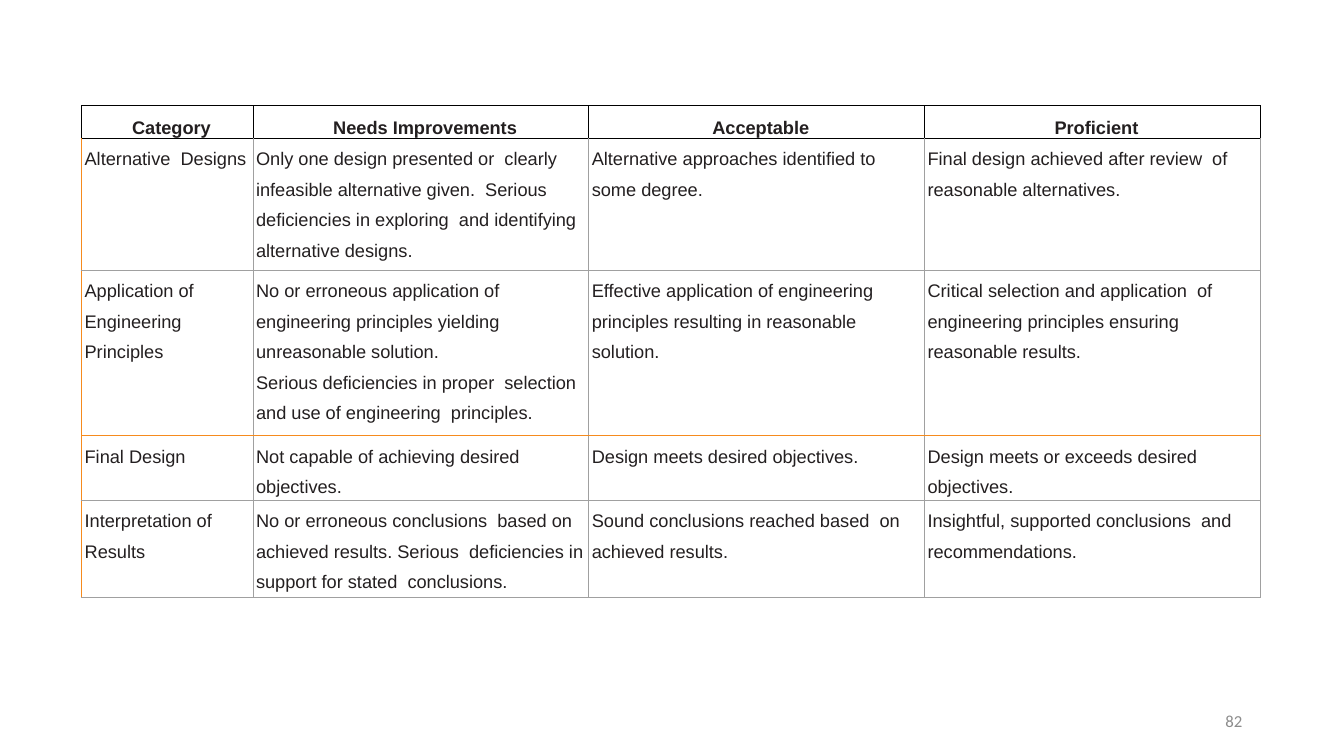
from lxml import etree
from pptx import Presentation
from pptx.dml.color import RGBColor
from pptx.enum.text import MSO_ANCHOR, PP_ALIGN
from pptx.oxml.ns import qn
from pptx.util import Inches, Pt

CENTER, RIGHT, LEFT = PP_ALIGN.CENTER, PP_ALIGN.RIGHT, PP_ALIGN.LEFT
TOP, MIDDLE = MSO_ANCHOR.TOP, MSO_ANCHOR.MIDDLE

RUBRIC = [
    ["Category", "Needs Improvements", "Acceptable", "Proficient"],
    ["Alternative  Designs",
     "Only one design presented or  clearly infeasible alternative given.  Serious deficiencies in exploring  and identifying alternative designs.",
     "Alternative approaches identified to some degree.",
     "Final design achieved after review  of reasonable alternatives."],
    ["Application of  Engineering  Principles",
     "No or erroneous application of  engineering principles yielding  unreasonable solution.\n"
     "Serious deficiencies in proper  selection and use of engineering  principles.",
     "Effective application of engineering  principles resulting in reasonable  solution.",
     "Critical selection and application  of engineering principles ensuring  reasonable results."],
    ["Final Design",
     "Not capable of achieving desired  objectives.",
     "Design meets desired objectives.",
     "Design meets or exceeds desired  objectives."],
    ["Interpretation of  Results",
     "No or erroneous conclusions  based on achieved results. Serious  deficiencies in support for stated  conclusions.",
     "Sound conclusions reached based  on achieved results.",
     "Insightful, supported conclusions  and recommendations."],
]
PAGE_NUMBER = "82"
COL_WIDTHS = [1.7, 3.33, 3.33, 3.33]
ROW_HEIGHTS = [0.31, 1.31, 1.64, 0.64, 0.97]

THEME = {
    "text": "231F20", "number": "8C8C8C",
    "black": "000000", "grey": "A0A0A0", "orange": "F68B1E",
    "table_font": "Arial", "table_size": 13,
    "number_font": "Calibri", "number_size": 12,
    "line": 0.75,
}
ROW_RULES = ["black", "black", "grey", "orange", "grey", "grey"]


def style_runs(p, font, size, color, bold=False):
    for r in p.runs:
        r.font.name = font
        r.font.size = Pt(size)
        r.font.bold = bold
        r.font.color.rgb = RGBColor.from_string(color)


def set_borders(cell, colors):
    tc_pr = cell._tc.get_or_add_tcPr()
    for side, color in zip("LRTB", colors):
        ln = etree.SubElement(tc_pr, qn(f"a:ln{side}"), w=str(Pt(THEME["line"])))
        fill = etree.SubElement(ln, qn("a:solidFill"))
        etree.SubElement(fill, qn("a:srgbClr"), val=THEME[color])


def column_rule(row, edge):
    if row == 0:
        return "black"
    return "orange" if edge == 0 else "grey"


def fill_cell(cell, text, row, col):
    header = row == 0
    cell.margin_left = cell.margin_right = cell.margin_bottom = 0
    cell.margin_top = Inches(0.02 if header else 0.01)
    cell.vertical_anchor = MIDDLE if header else TOP
    cell.text_frame.text = text
    for p in cell.text_frame.paragraphs:
        p.alignment = CENTER if header else LEFT
        p.line_spacing = 1.5
        p._p.get_or_add_pPr().set("marL", str(Inches(0.08 if header else 0.03)))
        style_runs(p, THEME["table_font"], THEME["table_size"], THEME["text"], header)
    set_borders(cell, [column_rule(row, col), column_rule(row, col + 1),
                       ROW_RULES[row], ROW_RULES[row + 1]])
    cell.fill.background()


def add_rubric(s):
    table = s.shapes.add_table(
        len(RUBRIC), len(COL_WIDTHS), Inches(0.81), Inches(1.05),
        Inches(sum(COL_WIDTHS)), Inches(sum(ROW_HEIGHTS))).table
    table.first_row = table.horz_banding = False
    for column, width in zip(table.columns, COL_WIDTHS):
        column.width = Inches(width)
    for row, height in zip(table.rows, ROW_HEIGHTS):
        row.height = Inches(height)
    for i, texts in enumerate(RUBRIC):
        for j, text in enumerate(texts):
            fill_cell(table.cell(i, j), text, i, j)


def add_page_number(s):
    tf = s.shapes.add_textbox(Inches(9.42), Inches(6.95), Inches(3), Inches(0.4)).text_frame
    tf.word_wrap = True
    tf.vertical_anchor = MIDDLE
    tf.text = PAGE_NUMBER
    p = tf.paragraphs[0]
    p.alignment = RIGHT
    style_runs(p, THEME["number_font"], THEME["number_size"], THEME["number"])


def main():
    prs = Presentation()
    prs.slide_width, prs.slide_height = Inches(13.33), Inches(7.5)
    s = prs.slides.add_slide(prs.slide_layouts[6])
    add_rubric(s)
    add_page_number(s)
    prs.save("out.pptx")


if __name__ == "__main__":
    main()
